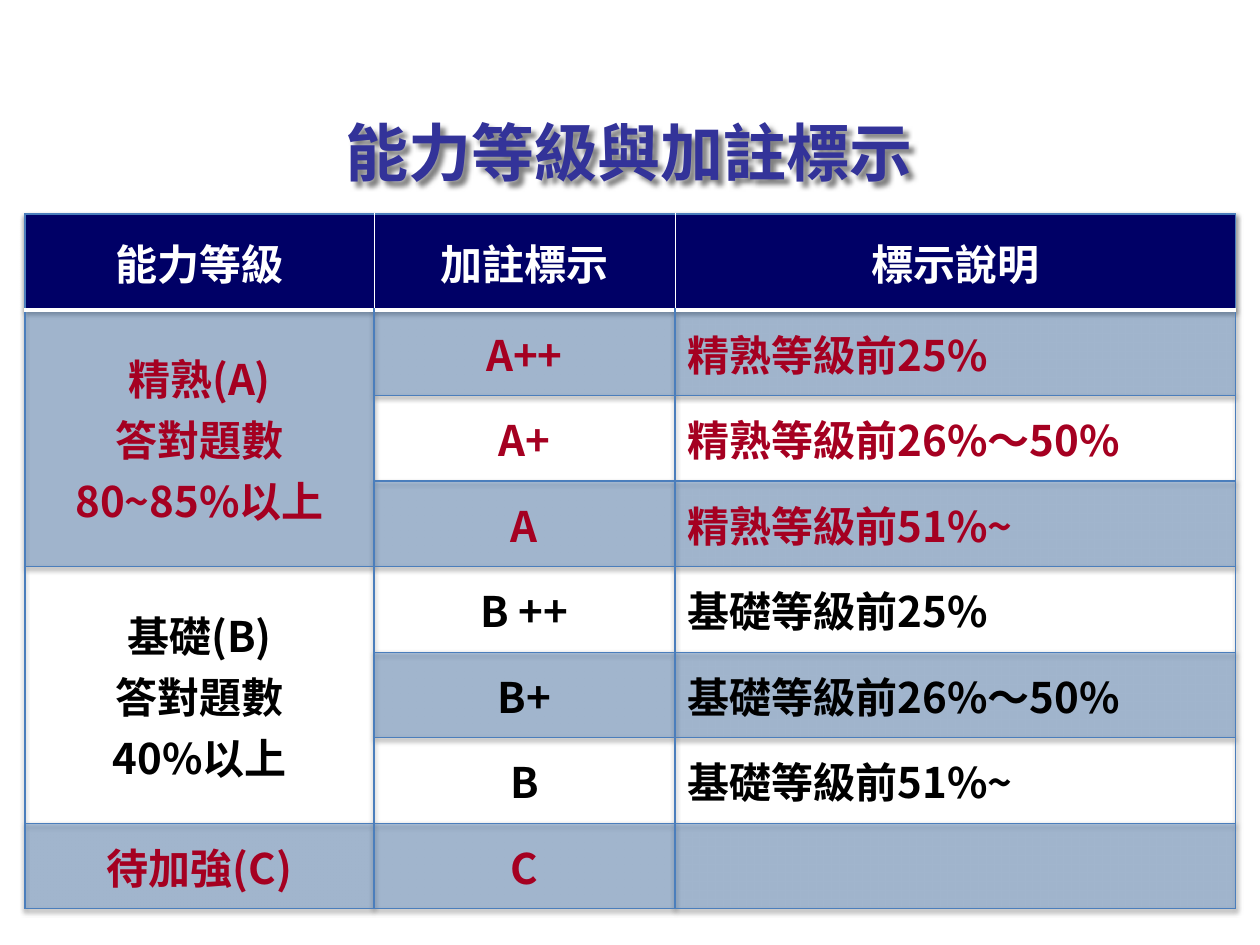
from lxml import etree
from pptx import Presentation
from pptx.dml.color import RGBColor
from pptx.enum.text import MSO_ANCHOR, PP_ALIGN
from pptx.oxml.ns import qn
from pptx.util import Pt

EMU_PER_PIXEL = 914400 // 126
TOP, MIDDLE = MSO_ANCHOR.TOP, MSO_ANCHOR.MIDDLE
LEFT, CENTER = PP_ALIGN.LEFT, PP_ALIGN.CENTER

WHITE = RGBColor(0xFF, 0xFF, 0xFF)
BLACK = RGBColor(0x00, 0x00, 0x00)
INDIGO = RGBColor(0x33, 0x33, 0x99)
NAVY = RGBColor(0x00, 0x00, 0x66)
CRIMSON = RGBColor(0xA5, 0x00, 0x21)
BLUE = RGBColor(0x4F, 0x81, 0xBD)
LINE_BLUE = RGBColor(0x4B, 0x7E, 0xBC)

HEADINGS = ["能力等級", "加註標示", "標示說明"]
LEVELS = [
    ("精熟(A)\n答對題數80~85%以上", CRIMSON, [
        ("A++", "精熟等級前25%"),
        ("A+", "精熟等級前26%～50%"),
        ("A", "精熟等級前51%~"),
    ]),
    ("基礎(B)\n答對題數\n40%以上", BLACK, [
        ("B ++", "基礎等級前25%"),
        ("B+", "基礎等級前26%～50%"),
        ("B", "基礎等級前51%~"),
    ]),
    ("待加強(C)", CRIMSON, [("C", "")]),
]


def px(length):
    return length * EMU_PER_PIXEL


def add_child(parent, tag, **attributes):
    return etree.SubElement(parent, qn(tag), attributes)


def add_color(parent, color, alpha=None):
    node = add_child(parent, "a:srgbClr", val=str(color))
    if alpha is not None:
        add_child(node, "a:alpha", val=str(alpha * 1000))


def make_shadow(blur, distance, angle, alpha):
    effects = etree.Element(qn("a:effectLst"))
    shadow = add_child(effects, "a:outerShdw", blurRad=str(Pt(blur)), dist=str(Pt(distance)),
                       dir=str(angle * 60000), algn="tl", rotWithShape="0")
    add_color(shadow, BLACK, alpha)
    return effects


class SlideBuilder:
    font_name = "Noto Sans CJK SC"

    def __init__(self, slide):
        self.slide = slide

    def style(self, para, size, color, align):
        para.alignment = align
        font = para.font
        font.size, font.bold, font.name = Pt(size), True, self.font_name
        font.color.rgb = color
        defaults = para._p.get_or_add_pPr().get_or_add_defRPr()
        add_child(defaults, "a:ea", typeface=self.font_name)

    def title(self, text, left, top, width, height):
        box = self.slide.shapes.title
        box.left, box.top, box.width, box.height = map(px, (left, top, width, height))
        box.fill.background()
        box._element.spPr.append(make_shadow(3, 3, 45, 50))
        frame = box.text_frame
        frame.text = text
        frame.word_wrap = True
        frame.vertical_anchor = TOP
        para = frame.paragraphs[0]
        para.line_spacing = 0.9
        self.style(para, 36, INDIGO, LEFT)

    def table(self, left, top, widths, header_height, body_height, row_count):
        frame = self.slide.shapes.add_table(
            row_count, len(widths), px(left), px(top),
            px(sum(widths)), px(header_height + body_height))
        table = frame.table
        table.first_row = table.horz_banding = False
        table._tbl.tblPr.insert(0, make_shadow(3, 1.5, 90, 38))
        for column, width in zip(table.columns, widths):
            column.width = px(width)
        for index, row in enumerate(table.rows):
            row.height = px(body_height) // (row_count - 1) if index else px(header_height)
        return table

    def cell(self, cell, text, color, align, fill, alpha, borders):
        cell.text = text
        cell.vertical_anchor = MIDDLE
        for para in cell.text_frame.paragraphs:
            self.style(para, 24, color, align)
        properties = cell._tc.get_or_add_tcPr()
        for side, (line_color, width) in zip("LRTB", borders):
            line = add_child(properties, f"a:ln{side}", w=str(Pt(width)))
            add_color(add_child(line, "a:solidFill"), line_color)
        if fill is None:
            cell.fill.background()
        else:
            add_color(add_child(properties, "a:solidFill"), fill, alpha)


def fill_header(builder, table):
    edge, divider, rule = (LINE_BLUE, 0.75), (WHITE, 0.5), (WHITE, 2)
    last = len(HEADINGS) - 1
    for column, heading in enumerate(HEADINGS):
        borders = [divider if column else edge, divider if column < last else edge, edge, rule]
        builder.cell(table.cell(0, column), heading, WHITE, CENTER, NAVY, None, borders)


def fill_levels(builder, table):
    edge = (LINE_BLUE, 0.75)
    row = 1
    for name, color, marks in LEVELS:
        first = row
        if len(marks) > 1:
            table.cell(first, 0).merge(table.cell(first + len(marks) - 1, 0))
        for mark, note in marks:
            fill = BLUE if row % 2 else None
            borders = [edge, edge, (WHITE, 2) if row == 1 else edge, edge]
            texts = [name, mark, note] if row == first else [None, mark, note]
            for column, text in enumerate(texts):
                if text is not None:
                    align = LEFT if column == 2 else CENTER
                    builder.cell(table.cell(row, column), text, color, align, fill, 40, borders)
            row += 1


def main():
    deck = Presentation()
    deck.slide_width, deck.slide_height = px(1260), px(945)
    builder = SlideBuilder(deck.slides.add_slide(deck.slide_layouts[5]))
    builder.title("能力等級與加註標示", 333, 116, 1043, 117)
    row_count = 1 + sum(len(marks) for _, _, marks in LEVELS)
    table = builder.table(25, 214, [349, 301, 561], 96, 599, row_count)
    fill_header(builder, table)
    fill_levels(builder, table)
    deck.save("out.pptx")


if __name__ == "__main__":
    main()
